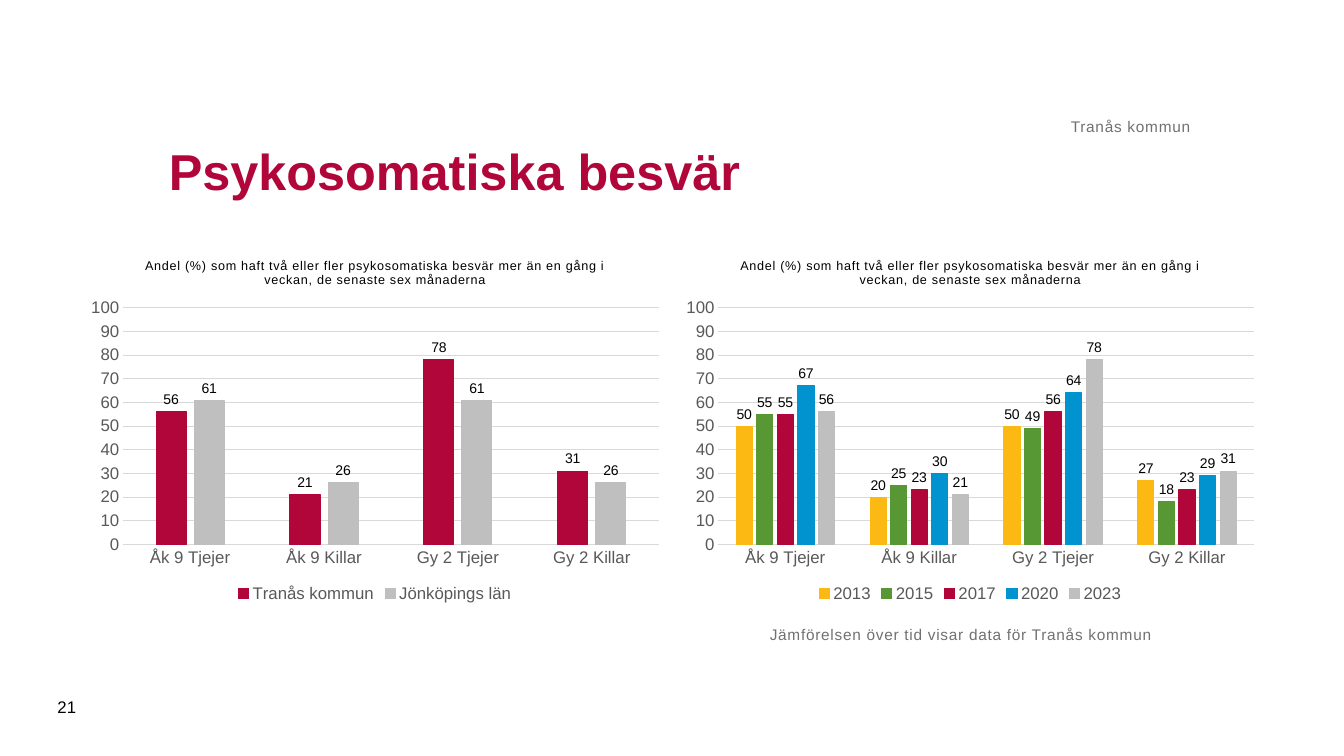
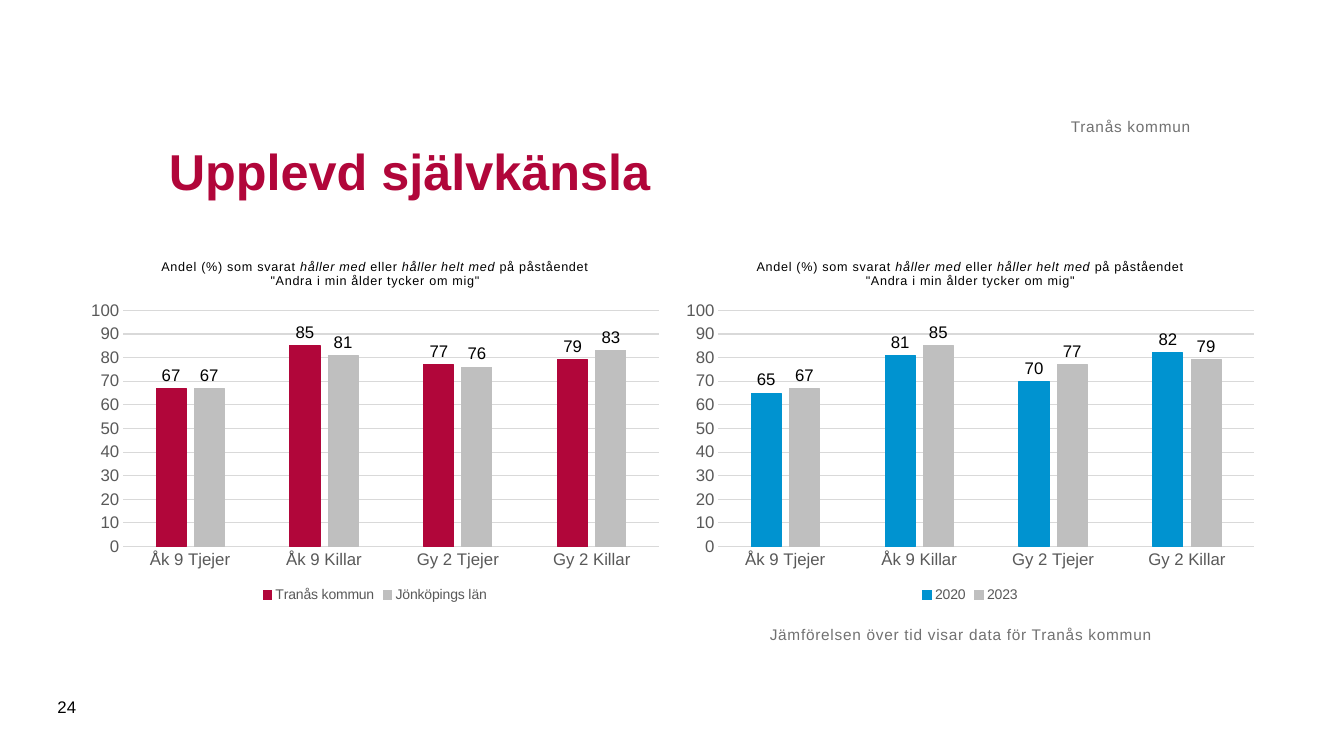
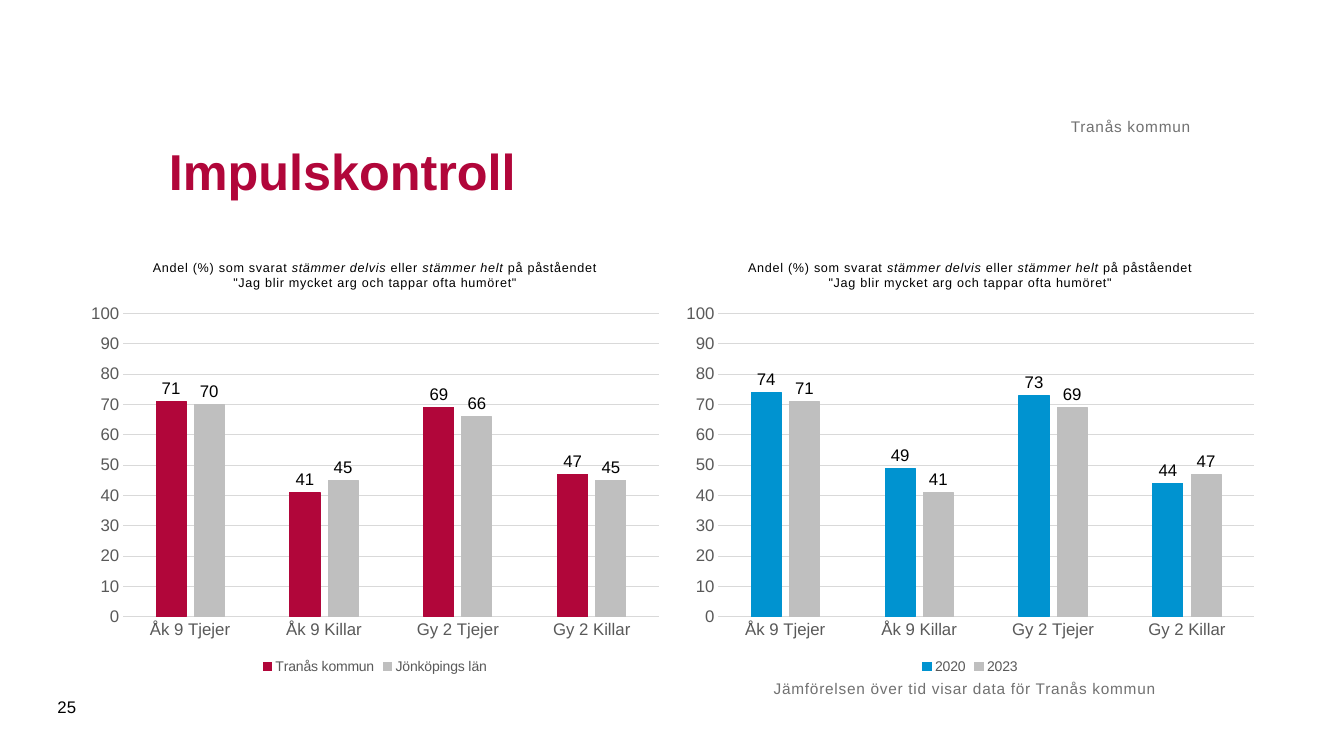
"""Build three survey slides that compare a municipality with its county and over time."""
from pptx import Presentation
from pptx import util as u
from pptx.chart.data import CategoryChartData
from pptx.dml.color import RGBColor
from pptx.enum import chart as ch, text

FONT = "Arial"
COLOURS = {
    "title": "B1063A", "muted": "717171", "black": "000000",
    "axis": "595959", "grid": "D9D9D9",
    "Tranås kommun": "B1063A", "Jönköpings län": "BFBFBF",
    "2013": "FDB913", "2015": "579835", "2017": "B1063A",
    "2020": "0093D0", "2023": "BFBFBF",
}
GROUPS = ["Åk 9 Tjejer", "Åk 9 Killar", "Gy 2 Tjejer", "Gy 2 Killar"]
MUNICIPALITY, COUNTY, LATEST = "Tranås kommun", "Jönköpings län", "2023"
NOTE = "Jämförelsen över tid visar data för Tranås kommun"
WHOLE = "#,##0;#,##0"
CHART_LEFTS = (2, 17)

PAGES = [
    dict(
        heading="Psykosomatiska besvär", number="21",
        question=["Andel (%) som haft två eller fler psykosomatiska besvär mer än "
                  "en gång i veckan, de senaste sex månaderna"],
        local=[56, 21, 78, 31], county=[61, 26, 61, 26],
        earlier={"2013": [50, 20, 50, 27], "2015": [55, 25, 49, 18],
                 "2017": [55, 23, 56, 23], "2020": [67, 30, 64, 29]},
        label_size=10, legend_size=12,
    ),
    dict(
        heading="Upplevd självkänsla", number="24",
        question=["Andel (%) som svarat ", "håller med", " eller ", "håller helt med",
                  " på påståendet \"Andra i min ålder tycker om mig\""],
        local=[67, 85, 77, 79], county=[67, 81, 76, 83],
        earlier={"2020": [65, 81, 70, 82]},
    ),
    dict(
        heading="Impulskontroll", number="25",
        question=["Andel (%) som svarat ", "stämmer delvis", " eller ", "stämmer helt",
                  " på påståendet \"Jag blir mycket arg och tappar ofta humöret\""],
        local=[71, 41, 69, 47], county=[70, 45, 66, 45],
        earlier={"2020": [74, 49, 73, 44]},
        chart_height=11, note_at=(19.5, 17.12),
    ),
]


def rgb(name):
    """Return the named colour."""
    return RGBColor.from_string(COLOURS[name])


def style_font(font, size, colour, bold=False, italic=False):
    """Give a font its face, size and colour."""
    font.name, font.size = FONT, u.Pt(size)
    font.bold, font.italic = bold, italic
    font.color.rgb = rgb(colour)


def add_run(paragraph, wording, size, colour, spacing=0, **style):
    """Append one styled run, with letter spacing in points."""
    run = paragraph.add_run()
    run.text = wording
    style_font(run.font, size, colour, **style)
    if spacing:
        run._r.get_or_add_rPr().set("spc", str(int(spacing * 100)))


def add_heading(slide, wording):
    """Place and fill the title placeholder."""
    heading = slide.shapes.title
    heading.left, heading.top = u.Cm(4), u.Cm(2.5)
    heading.width, heading.height = u.Cm(26), u.Cm(3.6)
    frame = heading.text_frame
    frame.vertical_anchor = text.MSO_ANCHOR.MIDDLE
    frame.paragraphs[0].alignment = text.PP_ALIGN.LEFT
    add_run(frame.paragraphs[0], wording, 36, "title", bold=True)


def add_label(slide, wording, box, size=11, colour="muted", spacing=0.5, inset=0,
              anchor=text.MSO_ANCHOR.TOP, align=text.PP_ALIGN.LEFT):
    """Add a one-line text box."""
    frame = slide.shapes.add_textbox(*map(u.Cm, box)).text_frame
    frame.word_wrap = True
    frame.vertical_anchor = anchor
    if inset is not None:
        frame.margin_left = frame.margin_right = u.Cm(inset)
        frame.margin_top = frame.margin_bottom = u.Cm(inset)
    frame.paragraphs[0].alignment = align
    add_run(frame.paragraphs[0], wording, size, colour, spacing)


def style_axes(chart):
    """Format the group axis and the percentage axis."""
    for axis in (chart.category_axis, chart.value_axis):
        axis.major_tick_mark = axis.minor_tick_mark = ch.XL_TICK_MARK.NONE
        style_font(axis.tick_labels.font, 12, "axis")
    groups, percent = chart.category_axis, chart.value_axis
    percent.minimum_scale, percent.maximum_scale, percent.major_unit = 0, 100, 10
    percent.tick_labels.number_format = WHOLE
    percent.tick_labels.number_format_is_linked = False
    percent.format.line.fill.background()
    for line in (groups.format.line, percent.major_gridlines.format.line):
        line.color.rgb = rgb("grid")
        line.width = u.Pt(0.75)


def style_columns(plot, label_size):
    """Colour the columns and label each with its value."""
    plot.gap_width, plot.overlap, plot.vary_by_categories = 219, -27, False
    for series in plot.series:
        colour = rgb(series.name)
        series.format.fill.solid()
        series.format.fill.fore_color.rgb = colour
        series.format.line.color.rgb = colour
        series.format.line.width = u.Pt(0.75)
        series.invert_if_negative = False
        labels = series.data_labels
        labels.show_value = True
        labels.position = ch.XL_LABEL_POSITION.OUTSIDE_END
        labels.number_format, labels.number_format_is_linked = WHOLE, False
        style_font(labels.font, label_size, "black")


def add_columns(slide, box, question, answers, label_size, legend_size):
    """Add a column chart titled by its question, every second part in italics."""
    data = CategoryChartData(number_format=WHOLE)
    data.categories = GROUPS
    for name, shares in answers.items():
        data.add_series(name, shares)
    chart = slide.shapes.add_chart(
        ch.XL_CHART_TYPE.COLUMN_CLUSTERED, *map(u.Cm, box), data).chart
    style_font(chart.font, 10, "black")
    chart.has_title = True
    chart.chart_title.include_in_layout = False
    caption = chart.chart_title.text_frame.paragraphs[0]
    for index, part in enumerate(question):
        add_run(caption, part, 9, "black", 0.5, italic=index % 2 == 1)
    chart.has_legend = True
    chart.legend.position = ch.XL_LEGEND_POSITION.BOTTOM
    chart.legend.include_in_layout = False
    style_font(chart.legend.font, legend_size, "axis")
    style_axes(chart)
    style_columns(chart.plots[0], label_size)


def add_page(deck, heading, number, question, local, county, earlier, label_size=12,
             legend_size=10, chart_height=9.19, note_at=(19.4, 15.75)):
    """Add a slide with a regional comparison and a comparison over time."""
    slide = deck.slides.add_slide(deck.slide_layouts[5])
    add_heading(slide, heading)
    comparisons = ({MUNICIPALITY: local, COUNTY: county}, {**earlier, LATEST: local})
    for left, answers in zip(CHART_LEFTS, comparisons):
        add_columns(slide, (left, 6.1, 14.9, chart_height), question, answers,
                    label_size, legend_size)
    add_label(slide, MUNICIPALITY, (4, 1.58, 26, 1.85),
              anchor=text.MSO_ANCHOR.BOTTOM, align=text.PP_ALIGN.RIGHT)
    add_label(slide, NOTE, (*note_at, 13.5, 2.4))
    add_label(slide, number, (1.2, 17.3, 1.45, 1.02), size=12, colour="black",
              spacing=0, inset=None, anchor=text.MSO_ANCHOR.MIDDLE)


def main():
    """Build and save the deck."""
    deck = Presentation()
    deck.slide_width, deck.slide_height = u.Cm(33.87), u.Cm(19.05)
    for page in PAGES:
        add_page(deck, **page)
    deck.save("out.pptx")


if __name__ == "__main__":
    main()
